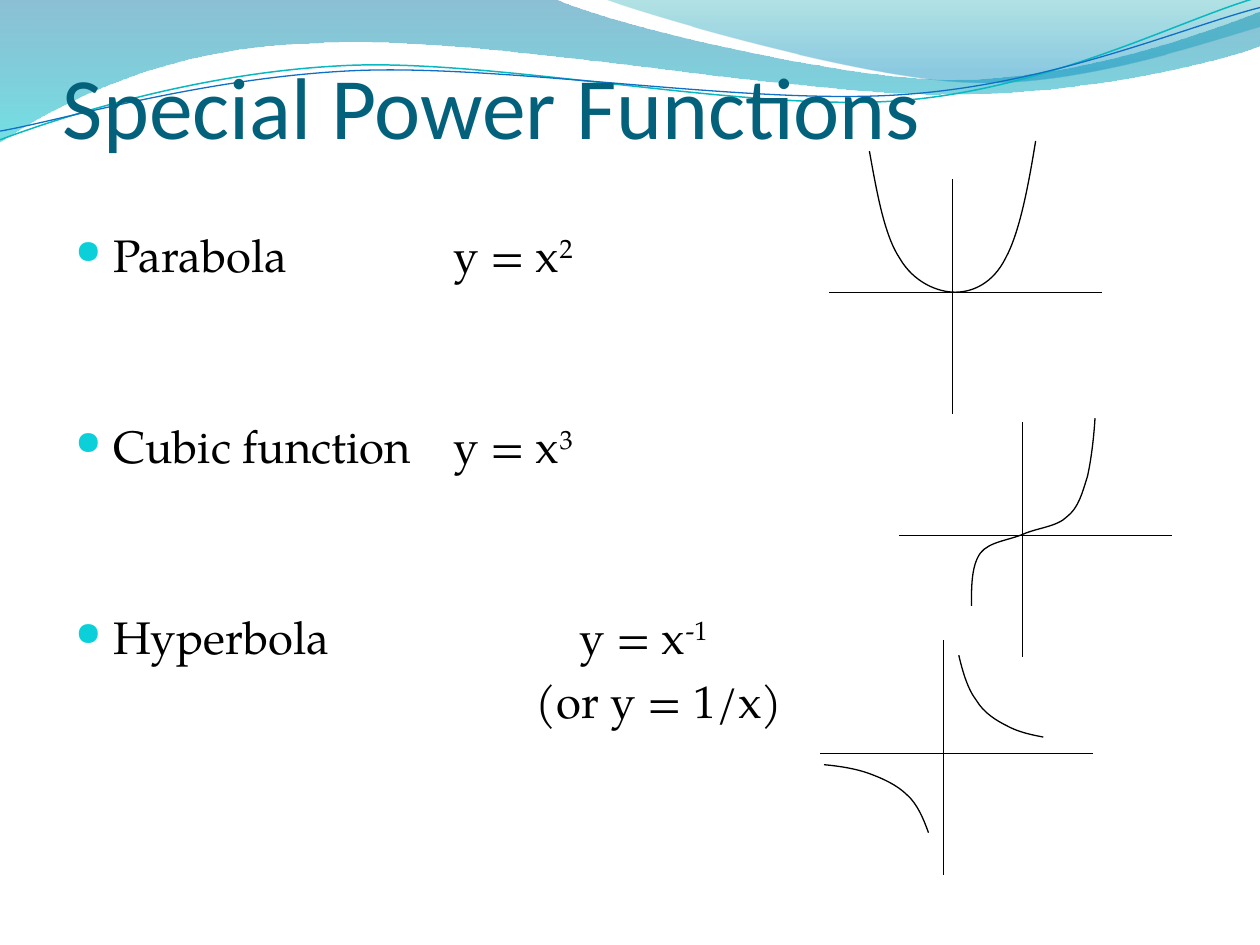
"""Build a slide on special power functions with sketches of their graphs."""
from lxml.etree import SubElement
from pptx import Presentation
from pptx.dml.color import RGBColor
from pptx.enum.shapes import MSO_CONNECTOR
from pptx.enum.text import MSO_ANCHOR
from pptx.oxml.ns import qn
from pptx.util import Pt

BLACK = RGBColor(0x00, 0x00, 0x00)
TITLE_BLUE = RGBColor(0x04, 0x61, 0x7B)
BULLET_CYAN = RGBColor(0x0B, 0xD0, 0xD9)
SEA_BLUE = RGBColor(0x00, 0x74, 0xA1)
TURQUOISE = RGBColor(0x00, 0xC6, 0xCF)
TEAL = RGBColor(0x00, 0xA1, 0xA9)
SKY_BLUE = RGBColor(0x00, 0x8B, 0xBF)
STROKE_TEAL = RGBColor(0x0A, 0xB8, 0xBF)
STROKE_BLUE = RGBColor(0x0F, 0x6F, 0xC6)

TITLE = "Special Power Functions"
BODY_SIZE = 26
SPACE, WIDE_SPACE = 5.2, 78
HANG, TAB = 21.6, 72
FUNCTIONS = [
    ("Parabola\t\ty = x", "2", SPACE, HANG, True),
    ("Cubic function\ty = x", "3", WIDE_SPACE, HANG, True),
    ("Hyperbola\t\ty = x", "-1", WIDE_SPACE, HANG, True),
    ("(or y = 1/x)", "", SPACE, 263.2, False),
]

WAVES = [
    ([(0, 0), (316.8, -0.7), (342.7, 12.2, 478.1, 45.4, 545.8, 45.4),
      (614.2, 45.4, 689.8, 18.7, 720, 6.5), (720.7, 25.9),
      (707.8, 31.7, 626.4, 54.7, 537.1, 54), (447.8, 54, 275, 20.2, 185, 24.5),
      (92.9, 25.9, 33.1, 59.8, -0.7, 81.4)],
     [(0, SEA_BLUE, 45), (1, TURQUOISE, 55)]),
    ([(344.9, -0.7), (366.5, 7.9, 491, 44.6, 553.7, 46.8),
      (616.3, 49.7, 691.9, 23, 720, 15.1), (720, 0)],
     [(0, TEAL, 30), (0.8, SKY_BLUE, 45)]),
]
STROKES = [
    ([(0, 79.9), (34.6, 67, 113.8, 41, 199.4, 37.4),
      (284.4, 33.8, 427, 64.1, 513.4, 57.6), (599.8, 51.1, 675.4, 10.8, 718.6, -1.4)],
     STROKE_TEAL, 0.85),
    ([(0, 74.9), (33.8, 69.1, 118.1, 43.9, 203.8, 40.3),
      (290.2, 36.7, 429.8, 60.5, 516.2, 54), (601.9, 48.2, 677.5, 15.1, 720, 4.3)],
     STROKE_BLUE, 0.75),
]
GRAPHS = [
    [(496.8, 86.4), (501.1, 110.2, 505.4, 134.6, 514.1, 147.6),
     (522, 161.3, 535.7, 167, 545.8, 167), (555.8, 167, 567.4, 162, 574.6, 147.6),
     (582.5, 133.2, 587.5, 107.3, 591.8, 80.6)],
    [(555.1, 346.3), (555.1, 334.8, 555.1, 323.3, 560.2, 316.1),
     (565.2, 309.6, 576, 308.9, 584.6, 305.3), (592.6, 301.7, 604.1, 301, 609.8, 295.2),
     (616.3, 290.2, 618.5, 281.5, 621.4, 272.2), (623.5, 262.8, 625, 250.6, 625.7, 239)],
    [(470.9, 437), (479.5, 437.8, 488.9, 439.2, 496.8, 442.1),
     (504.7, 445, 512.6, 448.6, 518.4, 454.3), (524.2, 459.4, 527.8, 468, 530.6, 475.9)],
    [(596.2, 421.2), (589, 419.8, 581.8, 418.3, 575.3, 414.7),
     (569.5, 411.8, 562.3, 407.5, 558, 400.3), (553, 393.8, 550.1, 383.8, 547.9, 374.4)],
]
ORIGINS = [(544.3, 167), (584.3, 306), (539.3, 430.6)]
AXIS_LEFT, AXIS_RIGHT, AXIS_UP, AXIS_DOWN = 70.6, 85.4, 64.8, 69.5


def draw_outline(slide, segments, close):
    """Add a freeform of straight (2 values) and cubic (6 values) segments."""
    points = [(Pt(x), Pt(y)) for part in segments for x, y in zip(part[::2], part[1::2])]
    builder = slide.shapes.build_freeform(*points[0], scale=1.0)
    builder.add_line_segments(points[1:], close=close)
    outline = builder.convert_to_shape()
    outline.shadow.inherit = False
    sides = iter(list(outline.element.spPr.iter(qn("a:lnTo"))))
    for segment in segments[1:]:
        side = next(sides)
        if len(segment) == 6:
            side.tag = qn("a:cubicBezTo")
            for extra in (next(sides), next(sides)):
                side.append(extra[0])
                extra.getparent().remove(extra)
    return outline


def draw_wave(slide, segments, stops):
    """Add a closed wave with a translucent vertical gradient."""
    wave = draw_outline(slide, segments, True)
    wave.line.fill.background()
    wave.fill.gradient()
    wave.fill.gradient_angle = 270
    for stop, (position, color, _) in zip(wave.fill.gradient_stops, stops):
        stop.position = position
        stop.color.rgb = color
    colors = wave.element.spPr.iter(qn("a:srgbClr"))
    for color, (_, _, opacity) in zip(colors, stops):
        SubElement(color, qn("a:alpha"), val=str(opacity * 1000))


def draw_curve(slide, segments, color=BLACK, width=0.75):
    """Add an open, unfilled curve."""
    curve = draw_outline(slide, segments, False)
    curve.fill.background()
    curve.line.color.rgb = color
    curve.line.width = Pt(width)


def draw_axis(slide, *ends):
    """Add one straight axis."""
    axis = slide.shapes.add_connector(MSO_CONNECTOR.STRAIGHT, *map(Pt, ends))
    axis.line.color.rgb = BLACK
    axis.line.width = Pt(0.75)
    SubElement(axis.element.spPr, qn("a:effectLst"))


def add_frame(slide, box, insets, anchor):
    """Add a wrapping text box and return its text frame."""
    frame = slide.shapes.add_textbox(*map(Pt, box)).text_frame
    frame.word_wrap = True
    frame.vertical_anchor = anchor
    (frame.margin_left, frame.margin_top,
     frame.margin_right, frame.margin_bottom) = map(Pt, insets)
    return frame


def write(paragraph, text, *, size, font, color, baseline=0):
    """Add a formatted run to the paragraph."""
    run = paragraph.add_run()
    run.text = text
    run.font.size = Pt(size)
    run.font.name = font
    run.font.color.rgb = color
    if baseline:
        run.font._element.set("baseline", str(baseline * 1000))


def indent(paragraph, margin, bullet):
    """Set the left margin and tab grid, with a hanging bullet if wanted."""
    properties = paragraph._p.get_or_add_pPr()
    properties.set("marL", str(Pt(margin)))
    properties.set("indent", str(Pt(-margin if bullet else 0)))
    properties.set("defTabSz", str(Pt(TAB)))
    if bullet:
        color = SubElement(properties, qn("a:buClr"))
        SubElement(color, qn("a:srgbClr"), val=str(BULLET_CYAN))
        SubElement(properties, qn("a:buSzPct"), val="72000")
        SubElement(properties, qn("a:buChar"), char="●")


def main():
    deck = Presentation()
    deck.slide_width, deck.slide_height = Pt(720), Pt(540)
    slide = deck.slides.add_slide(deck.slide_layouts[6])

    for segments, stops in WAVES:
        draw_wave(slide, segments, stops)
    for stroke in STROKES:
        draw_curve(slide, *stroke)

    title = add_frame(slide, (36, 0, 648, 90), (0, 3.6, 0, 0), MSO_ANCHOR.BOTTOM)
    write(title.paragraphs[0], TITLE, size=50, font="Calibri", color=TITLE_BLUE)

    body = add_frame(slide, (36, 126, 684, 396.7), (7.2, 3.6, 7.2, 3.6), MSO_ANCHOR.TOP)
    style = dict(size=BODY_SIZE, font="TeX Gyre Pagella", color=BLACK)
    for number, (text, power, space, margin, bullet) in enumerate(FUNCTIONS):
        paragraph = body.add_paragraph() if number else body.paragraphs[0]
        paragraph.space_before = Pt(space)
        indent(paragraph, margin, bullet)
        write(paragraph, text, **style)
        if power:
            write(paragraph, power, baseline=30, **style)

    for x, y in ORIGINS:
        draw_axis(slide, x, y - AXIS_UP, x, y + AXIS_DOWN)
        draw_axis(slide, x - AXIS_LEFT, y, x + AXIS_RIGHT, y)
    for graph in GRAPHS:
        draw_curve(slide, graph)

    deck.save("out.pptx")


if __name__ == "__main__":
    main()
